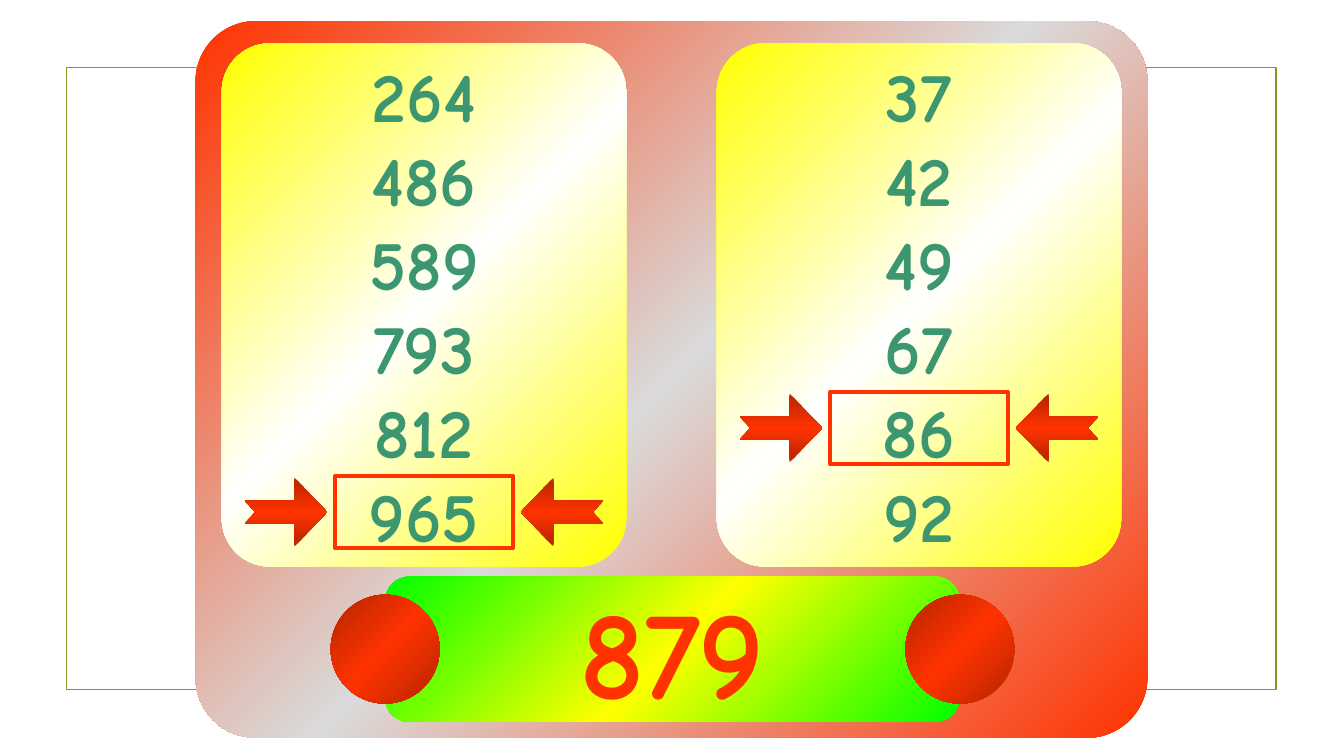
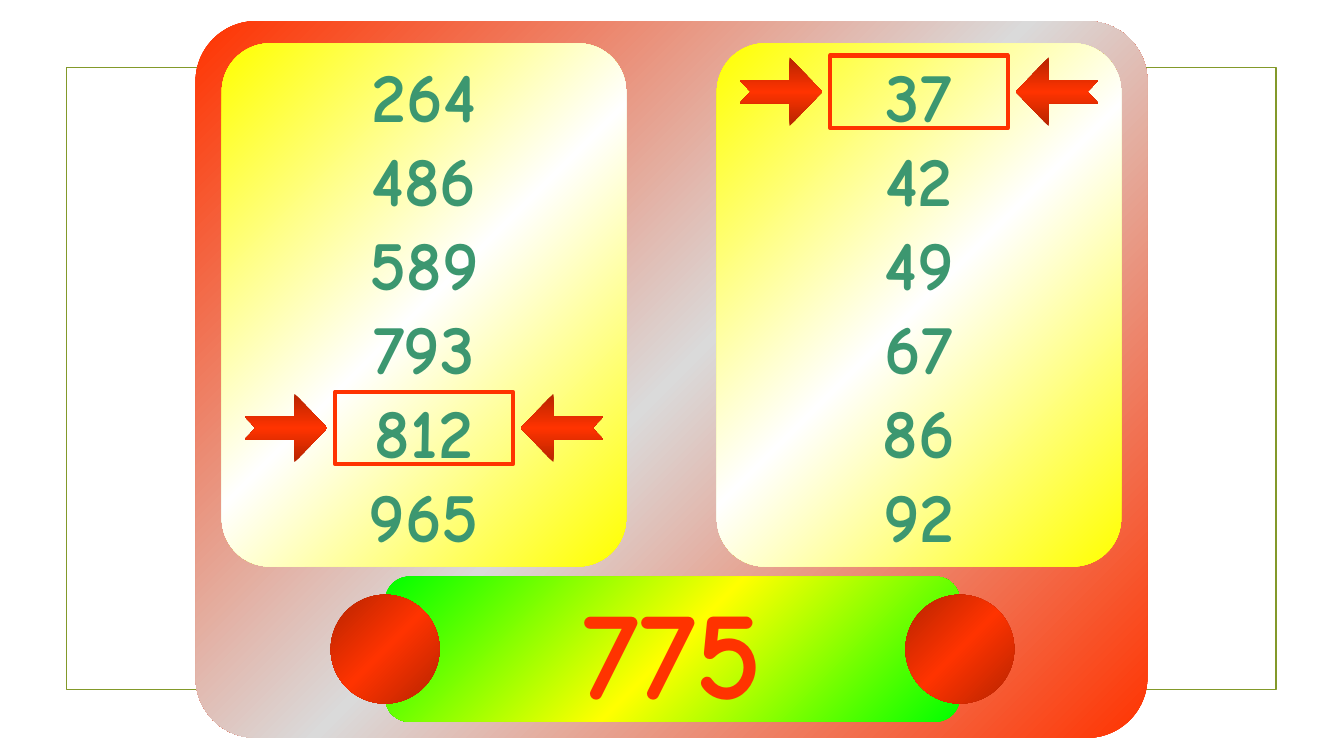
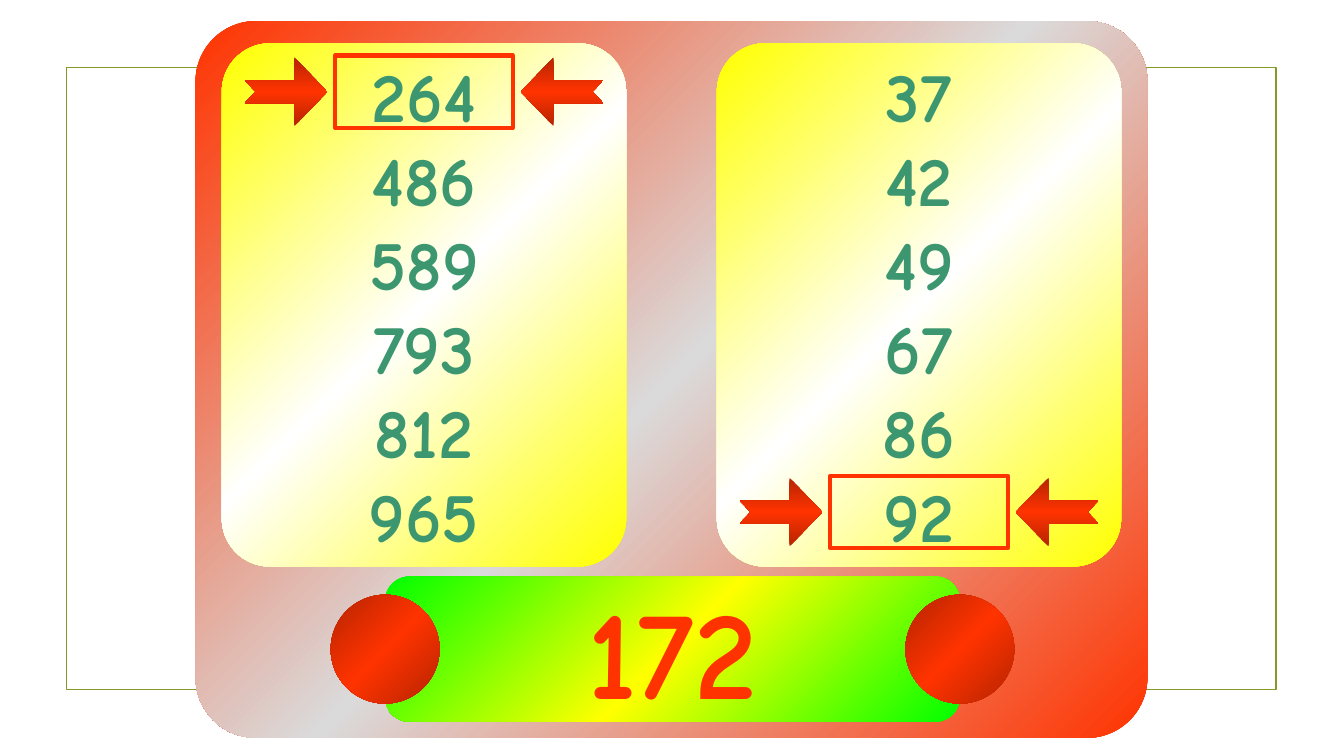
from copy import deepcopy

from pptx import Presentation
from pptx.dml.color import RGBColor
from pptx.enum.shapes import MSO_SHAPE
from pptx.enum.text import MSO_AUTO_SIZE, PP_ALIGN
from pptx.oxml.ns import qn
from pptx.util import Inches, Pt

RECT = MSO_SHAPE.RECTANGLE
ROUND_RECT = MSO_SHAPE.ROUNDED_RECTANGLE
ARROW = MSO_SHAPE.NOTCHED_RIGHT_ARROW
OVAL = MSO_SHAPE.OVAL
CENTER = PP_ALIGN.CENTER
FIT_SHAPE = MSO_AUTO_SIZE.SHAPE_TO_FIT_TEXT

FONT = "Comic Neue"
RED = "FF3300"
DARK_RED = "B62400"
GREY = "DADADA"
YELLOW = "FFFF00"
WHITE = "FFFFFF"
LIME = "00FF00"
TEAL = "3C9770"
OLIVE = "83992A"

BOARD = (1.94, 0.21, 9.44, 7.11)
PANEL_SIZE = (4.01, 5.19)
ROW_PITCH = 0.834
BLANK_LAYOUT = 6

LARGE_NUMBERS = ["264", "486", "589", "793", "812", "965"]
SMALL_NUMBERS = ["37", "42", "49", "67", "86", "92"]
ROUNDS = [("965", "86", "879"), ("812", "37", "775"), ("264", "92", "172")]


def rgb(value):
    return RGBColor.from_string(value)


def add_shape(shapes, preset, left, top, width, height, adjustments=()):
    shape = shapes.add_shape(
        preset, Inches(left), Inches(top), Inches(width), Inches(height))
    shape.shadow.inherit = False
    for index, value in enumerate(adjustments):
        shape.adjustments[index] = value
    return shape


def add_outline(shapes, left, top, width, height, color, weight):
    outline = add_shape(shapes, RECT, left, top, width, height)
    outline.fill.background()
    outline.line.color.rgb = rgb(color)
    outline.line.width = Pt(weight)
    return outline


def add_gradient(shapes, preset, left, top, width, height, edge, middle,
                 angle=45, adjustments=()):
    shape = add_shape(shapes, preset, left, top, width, height, adjustments)
    shape.line.fill.background()
    shape.fill.gradient()
    shape.fill.gradient_angle = 360 - angle
    stops = shape.element.spPr.find(qn("a:gradFill")).find(qn("a:gsLst"))
    stops.append(deepcopy(stops[0]))
    for index, color in enumerate((edge, middle, edge)):
        stop = shape.fill.gradient_stops[index]
        stop.color.rgb = rgb(color)
        stop.position = index / 2
    return shape


def add_text(shapes, lines, left, top, width, height, size, color):
    box = shapes.add_textbox(
        Inches(left), Inches(top), Inches(width), Inches(height))
    frame = box.text_frame
    frame.word_wrap = True
    frame.auto_size = FIT_SHAPE
    frame.text = "\n".join(lines)
    for paragraph in frame.paragraphs:
        paragraph.alignment = CENTER
        font = paragraph.font
        font.name, font.size, font.bold = FONT, Pt(size), True
        font.color.rgb = rgb(color)


def add_master_frame(prs, slide):
    frame = add_outline(slide.shapes, 0.66, 0.67, 12, 6.17, OLIVE, 1.25)
    frame.element.nvSpPr.cNvPr.set("id", "20")
    prs.slide_master.shapes.element.insert(2, frame.element)


def add_marker(slide, center, top):
    shapes = slide.shapes.add_group_shape().shapes
    add_outline(shapes, center - 0.88, top, 1.76, 0.72, RED, 3)
    for offset, rotation in ((-1.78, 0), (0.96, 180)):
        arrow = add_gradient(shapes, ARROW, center + offset, top + 0.02,
                             0.82, 0.68, DARK_RED, RED, 90, (0.337, 0.477))
        arrow.rotation = rotation


def add_number_panel(slide, left, top, numbers, marked):
    width, height = PANEL_SIZE
    center = left + width / 2
    add_gradient(slide.shapes, ROUND_RECT, left, top, width, height,
                 YELLOW, WHITE, adjustments=(0.119,))
    add_text(slide.shapes, numbers, center - 1.54, top + 0.04, 3.08, 5.1,
             size=50, color=TEAL)
    add_marker(slide, center, top + 0.12 + ROW_PITCH * numbers.index(marked))


def add_answer_bar(slide, left, top, width, height, answer):
    add_gradient(slide.shapes, ROUND_RECT, left, top, width, height,
                 LIME, YELLOW, adjustments=(0.167,))
    add_text(slide.shapes, [answer], left - 0.5, top - 0.08, width + 1,
             height + 0.16, size=90, color=RED)
    knobs = slide.shapes.add_group_shape().shapes
    diameter = 1.08
    for middle in (left, left + width):
        add_gradient(knobs, OVAL, middle - diameter / 2,
                     top + (height - diameter) / 2, diameter, diameter,
                     DARK_RED, RED)


def add_board(slide, left, top, width, height, large, small, answer):
    add_gradient(slide.shapes, ROUND_RECT, left, top, width, height,
                 RED, GREY, adjustments=(0.084,))
    add_answer_bar(slide, left + 1.88, top + 5.51, 5.7, 1.44, answer)
    margin = 0.26
    right_panel = left + width - margin - PANEL_SIZE[0]
    add_number_panel(slide, left + margin, top + 0.22, LARGE_NUMBERS, large)
    add_number_panel(slide, right_panel, top + 0.22, SMALL_NUMBERS, small)


def main():
    prs = Presentation()
    prs.slide_width, prs.slide_height = Inches(13.33), Inches(7.5)
    for large, small, answer in ROUNDS:
        slide = prs.slides.add_slide(prs.slide_layouts[BLANK_LAYOUT])
        if len(prs.slides) == 1:
            add_master_frame(prs, slide)
        add_board(slide, *BOARD, large, small, answer)
    prs.save("out.pptx")


if __name__ == "__main__":
    main()
